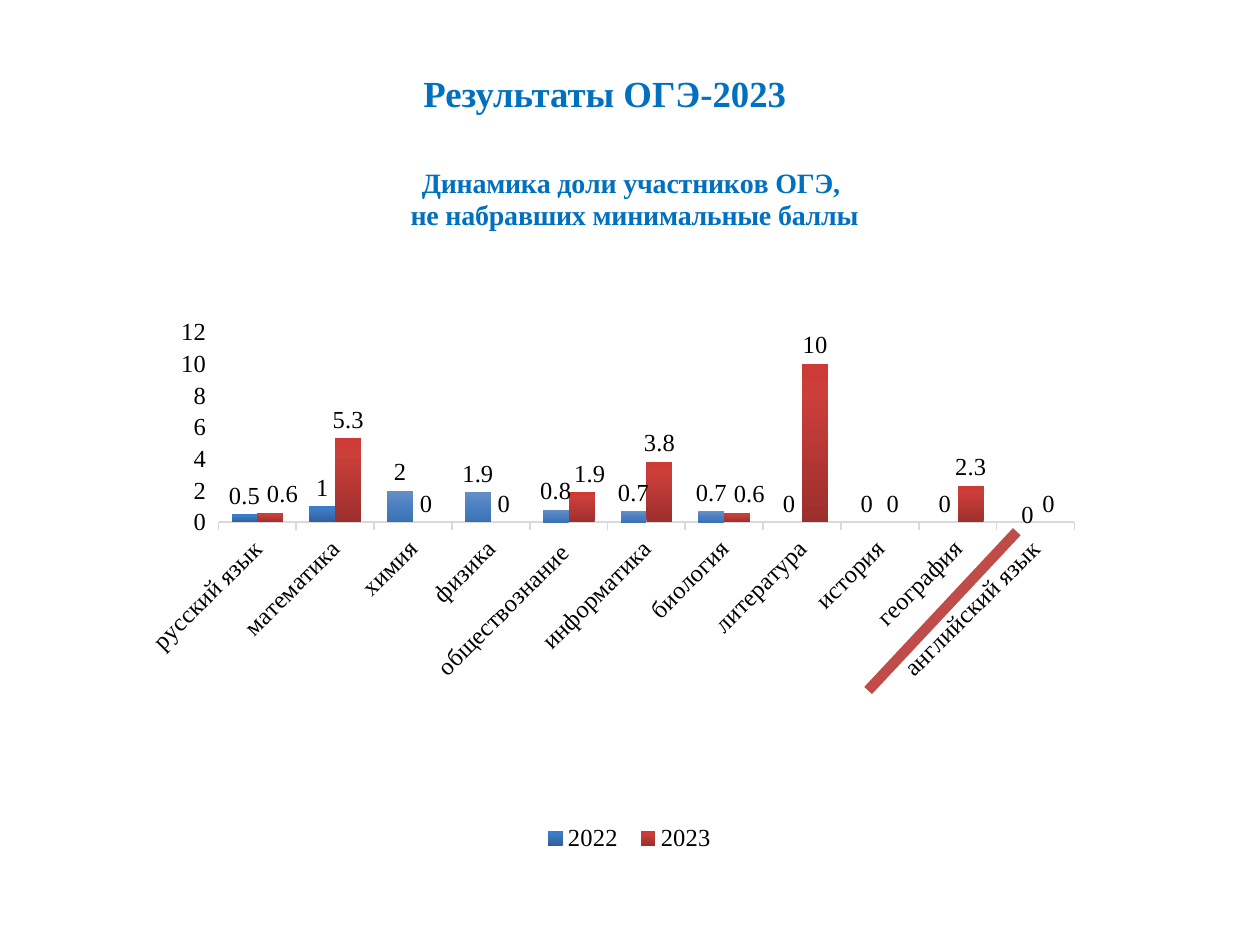
"""Build the slide with exam results and a two-year column chart."""
from dataclasses import dataclass, field

import pptx
import pptx.chart.data
import pptx.dml.color
import pptx.enum.chart
import pptx.enum.shapes
import pptx.enum.text
import pptx.oxml
import pptx.oxml.ns
import pptx.util
from pptx.util import Inches

FONT = "Times New Roman"
BLUE, BLACK = "0070C0", "000000"
LABEL_FORMAT = {"name": FONT, "size": pptx.util.Pt(14), "bold": False}
TITLE_FORMAT = {"name": FONT, "size": pptx.util.Pt(21), "bold": True}
CHART_TITLE_FORMAT = TITLE_FORMAT | {"size": pptx.util.Pt(16)}
SUBJECTS = ["русский язык", "математика", "химия", "физика", "обществознание ", "информатика",
            "биология", "литература", "история", "география", "английский язык"]
CHART_TITLE = ["Динамика доли участников ОГЭ, ", "не набравших минимальные баллы"]


@dataclass
class Gradient:
    """Colour stops by percent and a clockwise angle in degrees."""
    stops: dict[int, str]
    angle: int


@dataclass
class YearSeries:
    """One year of results, with its fill and shifted labels."""
    name: str
    values: list[float]
    gradient: Gradient
    label_shifts: dict[int, tuple[float, float]]
    point_gradients: dict[int, Gradient] = field(default_factory=dict)


PALE_BLUE = Gradient({0: "688FC5", 50: "4A80C3", 100: "3B72B3"}, 90)
YEARS = [
    YearSeries("2022", [0.5, 1, 2, 1.9, 0.8, 0.7, 0.7, 0, 0, 0, 0],
               Gradient({0: "2F5F99", 80: "3D7CC7", 100: "3A7CCB"}, 270),
               {10: (0.005, 0.015)},
               {index: PALE_BLUE for index in range(2, len(SUBJECTS))}),
    YearSeries("2023", [0.6, 5.3, 0, 0, 1.9, 3.8, 0.6, 10, 0, 2.3, 0],
               Gradient({0: "9C2F2D", 80: "CB3E3A", 100: "CE3B37"}, 270),
               {0: (0.012, 0), 4: (0.008, 0), 6: (0.012, 0)}),
]


def rgb(value: str) -> pptx.dml.color.RGBColor:
    """Turn a hex string into a colour."""
    return pptx.dml.color.RGBColor.from_string(value)


def format_font(font, values: dict, color: str) -> None:
    """Set the font attributes and the colour."""
    for name, value in values.items():
        setattr(font, name, value)
    font.color.rgb = rgb(color)


def place(parent, index: int, **values) -> None:
    """Give a chart element a manual layout as its child at index."""
    for old in parent.findall(pptx.oxml.ns.qn("c:layout")):
        parent.remove(old)
    settings = "".join(f'<c:{name} val="{value}"/>' for name, value in values.items())
    parent.insert(index, pptx.oxml.parse_xml(
        f'<c:layout {pptx.oxml.ns.nsdecls("c")}><c:manualLayout>{settings}'
        "</c:manualLayout></c:layout>"))


def fill_gradient(fill, gradient: Gradient) -> None:
    """Fill with all stops of a gradient."""
    fill.gradient()
    fill.gradient_angle = (360 - gradient.angle) % 360
    stop_list = next(fill._xPr.iter(pptx.oxml.ns.qn("a:gsLst")))
    for stop in list(stop_list):
        stop_list.remove(stop)
    for percent, color in gradient.stops.items():
        stop_list.append(pptx.oxml.parse_xml(
            f'<a:gs {pptx.oxml.ns.nsdecls("a")} pos="{percent * 1000}">'
            f'<a:srgbClr val="{color}"/></a:gs>'))


def format_series(series, year: YearSeries) -> None:
    """Apply fills and value labels to one series."""
    position = pptx.enum.chart.XL_LABEL_POSITION.OUTSIDE_END
    series.invert_if_negative = False
    fill_gradient(series.format.fill, year.gradient)
    for index, gradient in year.point_gradients.items():
        fill_gradient(series.points[index].format.fill, gradient)
    labels = series.data_labels
    labels.show_value = True
    labels.position = position
    format_font(labels.font, LABEL_FORMAT, BLACK)
    for index, (x, y) in year.label_shifts.items():
        label = series.points[index].data_label
        label.position = position
        format_font(label.font, LABEL_FORMAT, BLACK)
        place(label._dLbl, 1, x=x, y=y)


def format_axes(chart) -> None:
    """Format the subject axis and the value axis."""
    for axis in (chart.category_axis, chart.value_axis):
        axis.has_major_gridlines = False
        axis.major_tick_mark = pptx.enum.chart.XL_TICK_MARK.OUTSIDE
        format_font(axis.tick_labels.font, LABEL_FORMAT, BLACK)
    chart.category_axis.format.line.color.rgb = rgb("D9D9D9")
    chart.category_axis.format.line.width = pptx.util.Pt(1)
    chart.category_axis._element.txPr.bodyPr.set("rot", "-2700000")
    chart.value_axis.format.line.fill.background()
    for name, value in {"minimum_scale": 0, "maximum_scale": 12, "major_unit": 2}.items():
        setattr(chart.value_axis, name, value)


def add_results_chart(slide) -> None:
    """Add the column chart with its title, axes and legend."""
    data = pptx.chart.data.CategoryChartData()
    data.categories = SUBJECTS
    for year in YEARS:
        data.add_series(year.name, year.values)
    chart = slide.shapes.add_chart(
        pptx.enum.chart.XL_CHART_TYPE.COLUMN_CLUSTERED,
        Inches(0.98), Inches(1.07), Inches(8.03), Inches(6.24), data).chart
    format_font(chart.font, LABEL_FORMAT, BLACK)
    frame = chart.chart_title.text_frame
    for index, text in enumerate(CHART_TITLE):
        paragraph = frame.add_paragraph() if index else frame.paragraphs[0]
        run = paragraph.add_run()
        run.text = text
        format_font(run.font, CHART_TITLE_FORMAT, BLUE)
    place(chart.chart_title._element, 1, xMode="edge", yMode="edge", x=0.28, y=0.035)
    plot = chart.plots[0]
    plot.gap_width, plot.overlap, plot.vary_by_categories = 100, 0, False
    place(chart._chartSpace.chart.plotArea, 0, layoutTarget="inner", xMode="edge", yMode="edge",
          x=0.094, y=0.251, w=0.846, h=0.242)
    format_axes(chart)
    for series, year in zip(plot.series, YEARS):
        format_series(series, year)
    chart.has_legend = True
    chart.legend.position = pptx.enum.chart.XL_LEGEND_POSITION.BOTTOM
    chart.legend.include_in_layout = False
    format_font(chart.legend.font, LABEL_FORMAT, BLACK)
    place(chart.legend._element, 1, xMode="edge", yMode="edge", x=0.405, y=0.87, w=0.19, h=0.05)


def add_title(slide) -> None:
    """Fill and move the title placeholder."""
    title = slide.shapes.title
    box = {"left": -0.2, "top": 0.19, "width": 10, "height": 1.09}
    for name, value in box.items():
        setattr(title, name, Inches(value))
    title.text_frame.vertical_anchor = pptx.enum.text.MSO_ANCHOR.MIDDLE
    paragraph = title.text_frame.paragraphs[0]
    paragraph.alignment = pptx.enum.text.PP_ALIGN.CENTER
    run = paragraph.add_run()
    run.text = "Результаты ОГЭ-2023"
    format_font(run.font, TITLE_FORMAT, BLUE)


def add_marker_line(slide) -> None:
    """Add the thick red line beside the last subject."""
    line = slide.shapes.add_connector(pptx.enum.shapes.MSO_CONNECTOR.STRAIGHT,
                                      Inches(6.89), Inches(5.48), Inches(8.07), Inches(4.22))
    line.line.color.rgb = rgb("BF4C48")
    line.line.width = pptx.util.Pt(6)
    line._element.spPr.append(pptx.oxml.parse_xml(
        f'<a:effectLst {pptx.oxml.ns.nsdecls("a")}/>'))


def main() -> None:
    """Build and save the presentation."""
    presentation = pptx.Presentation()
    presentation.slide_width, presentation.slide_height = Inches(10), Inches(7.5)
    slide = presentation.slides.add_slide(presentation.slide_layouts[5])
    add_title(slide)
    add_results_chart(slide)
    add_marker_line(slide)
    presentation.save("out.pptx")


if __name__ == "__main__":
    main()
